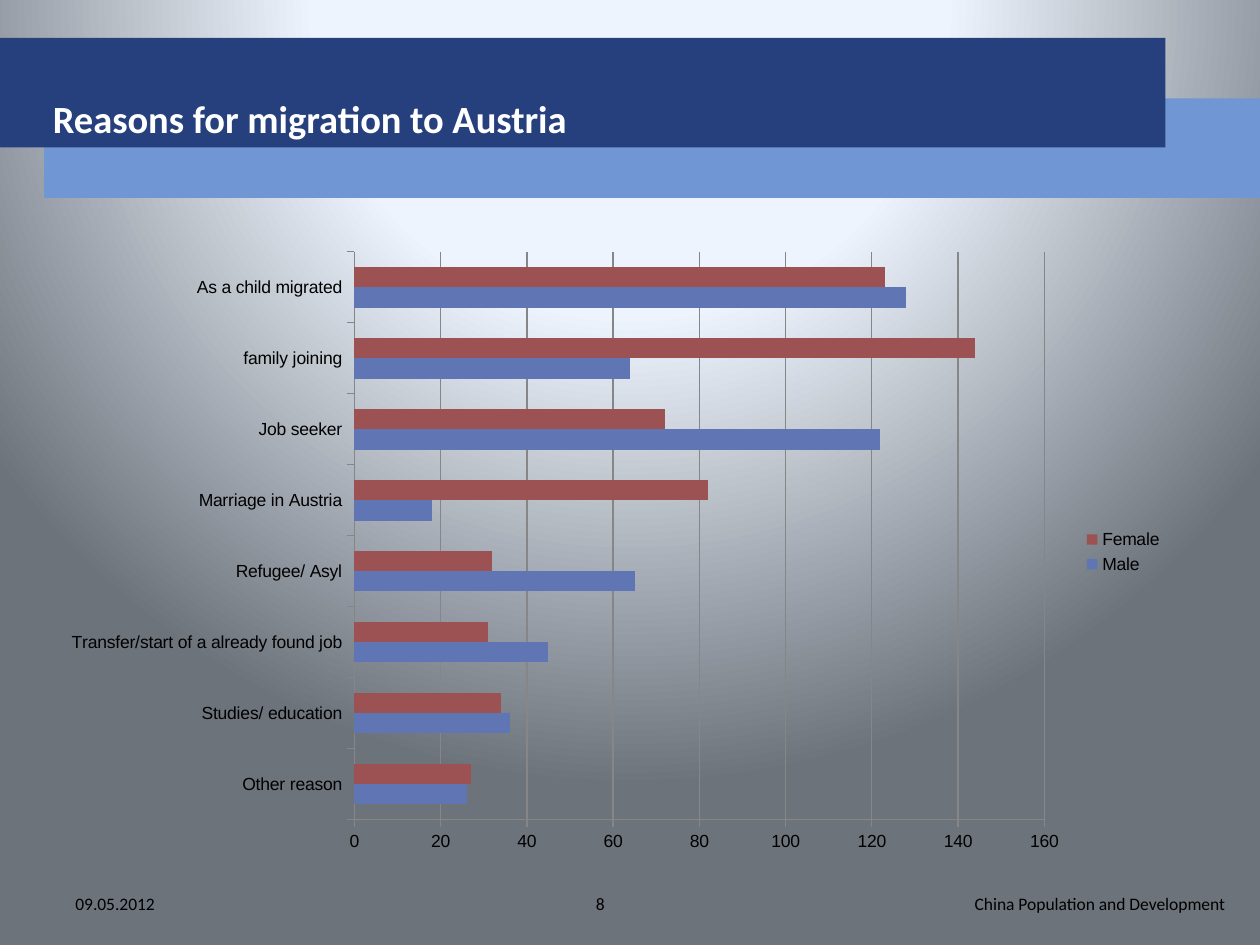
from typing import NamedTuple

from lxml import etree
from pptx import Presentation
from pptx.chart.data import CategoryChartData
from pptx.dml.color import RGBColor
from pptx.enum.chart import XL_CHART_TYPE, XL_LEGEND_POSITION, XL_TICK_MARK
from pptx.enum.shapes import MSO_SHAPE
from pptx.enum.text import MSO_ANCHOR, MSO_AUTO_SIZE, PP_ALIGN
from pptx.oxml.ns import qn
from pptx.util import Inches, Pt

RECT = MSO_SHAPE.RECTANGLE
BAR = XL_CHART_TYPE.BAR_CLUSTERED
LEGEND_RIGHT = XL_LEGEND_POSITION.RIGHT
TICK_OUT, TICK_NONE = XL_TICK_MARK.OUTSIDE, XL_TICK_MARK.NONE
LEFT, CENTER, RIGHT = PP_ALIGN.LEFT, PP_ALIGN.CENTER, PP_ALIGN.RIGHT

WHITE = RGBColor(0xFF, 0xFF, 0xFF)
BLACK = RGBColor(0x00, 0x00, 0x00)
NAVY = RGBColor(0x26, 0x40, 0x7E)
LIGHT_BLUE = RGBColor(0x70, 0x97, 0xD3)
MALE_BLUE = RGBColor(0x60, 0x76, 0xB4)
FEMALE_RED = RGBColor(0x9C, 0x52, 0x52)
AXIS_GREY = RGBColor(0x86, 0x86, 0x86)
BG_STOPS = ((0, "F0F6FE"), (40, "EDF4FD"), (100, "6D737B"))
BG_FOCUS = {"l": 50, "t": -80, "r": 50, "b": 180}


class Band(NamedTuple):
    left: float
    top: float
    width: float
    height: float
    color: RGBColor


class FooterItem(NamedTuple):
    left: float
    text: str
    align: PP_ALIGN


class Series(NamedTuple):
    name: str
    values: tuple
    color: RGBColor


BANDS = (
    Band(0.35, 0.78, 9.65, 0.79, LIGHT_BLUE),
    Band(0, 0.3, 9.25, 0.87, NAVY),
)
FOOTER = (
    FooterItem(7.49, "China Population and Development", RIGHT),
    FooterItem(3.6, "8", CENTER),
    FooterItem(0.5, "09.05.2012", LEFT),
)
REASONS = (
    "Other reason", "Studies/ education",
    "Transfer/start of a already found job", "Refugee/ Asyl",
    "Marriage in Austria", "Job seeker", "family joining",
    "As a child migrated",
)
SERIES = (
    Series("Male", (26, 36, 45, 65, 18, 122, 64, 128), MALE_BLUE),
    Series("Female", (27, 34, 31, 32, 82, 72, 144, 123), FEMALE_RED),
)


def set_font(font, color: RGBColor, **values) -> None:
    for name, value in values.items():
        setattr(font, name, value)
    font.color.rgb = color


def set_background(s) -> None:
    """Circular gradient centred above the slide."""
    fill = s.background.fill
    fill.gradient()
    grad = s.background._cSld.find(".//" + qn("a:gradFill"))
    for child in list(grad):
        grad.remove(child)
    stops = etree.SubElement(grad, qn("a:gsLst"))
    for percent, color in BG_STOPS:
        stop = etree.SubElement(stops, qn("a:gs"), pos=str(percent * 1000))
        etree.SubElement(stop, qn("a:srgbClr"), val=color)
    circle = etree.SubElement(grad, qn("a:path"))
    circle.set("path", "circle")
    focus = {side: str(value * 1000) for side, value in BG_FOCUS.items()}
    etree.SubElement(circle, qn("a:fillToRect"), **focus)


def add_band(s, band: Band) -> None:
    sp = s.shapes.add_shape(RECT, *(Inches(v) for v in band[:4]))
    sp.shadow.inherit = False
    sp.fill.solid()
    sp.fill.fore_color.rgb = band.color
    sp.line.fill.background()


def add_footer_item(s, item: FooterItem) -> None:
    sp = s.shapes.add_textbox(Inches(item.left), Inches(6.97), Inches(2.33), Inches(0.4))
    tf = sp.text_frame
    tf.word_wrap = True
    tf.vertical_anchor = MSO_ANCHOR.MIDDLE
    p = tf.paragraphs[0]
    p.alignment = item.align
    r = p.add_run()
    r.text = item.text
    set_font(r.font, BLACK, name="Calibri", size=Pt(10))


def format_title(s, text: str) -> None:
    sp = s.shapes.title
    place = {"left": 0.13, "top": 0.3, "width": 8.81, "height": 0.87}
    for name, value in place.items():
        setattr(sp, name, Inches(value))
    s.shapes._spTree.append(sp._element)  # in front of the bands
    tf = sp.text_frame
    tf.auto_size = MSO_AUTO_SIZE.NONE
    tf.vertical_anchor = MSO_ANCHOR.BOTTOM
    p = tf.paragraphs[0]
    p.alignment = LEFT
    p._p.get_or_add_pPr().set("marL", str(Inches(0.19)))
    r = p.add_run()
    r.text = text
    set_font(r.font, WHITE, name="Calibri", size=Pt(22), bold=True)


def add_reasons_chart(s) -> None:
    data = CategoryChartData(number_format="0")
    data.categories = REASONS
    for series in SERIES:
        data.add_series(series.name, series.values)
    chart = s.shapes.add_chart(
        BAR, Inches(0.39), Inches(1.9), Inches(8.94), Inches(4.96), data
    ).chart
    set_font(chart.font, BLACK, name="Arial", size=Pt(10))
    chart.has_title = False
    chart.has_legend = True
    chart.legend.position = LEGEND_RIGHT
    chart.legend.include_in_layout = False

    plot = chart.plots[0]
    plot.gap_width = 150
    plot.vary_by_categories = False
    for drawn, series in zip(plot.series, SERIES):
        drawn.format.fill.solid()
        drawn.format.fill.fore_color.rgb = series.color

    value_axis = chart.value_axis
    scale = {"minimum_scale": 0, "maximum_scale": 160, "major_unit": 20,
             "has_major_gridlines": True}
    for name, value in scale.items():
        setattr(value_axis, name, value)
    for axis in (chart.category_axis, value_axis):
        axis.major_tick_mark = TICK_OUT
        axis.minor_tick_mark = TICK_NONE
    for part in (chart.category_axis, value_axis, value_axis.major_gridlines):
        part.format.line.color.rgb = AXIS_GREY
        part.format.line.width = Pt(0.75)


def main() -> None:
    prs = Presentation()
    prs.slide_width, prs.slide_height = Inches(10), Inches(7.5)
    s = prs.slides.add_slide(prs.slide_layouts[5])  # title only
    set_background(s)
    for band in BANDS:
        add_band(s, band)
    for item in FOOTER:
        add_footer_item(s, item)
    format_title(s, "Reasons for migration to Austria")
    add_reasons_chart(s)
    prs.save("out.pptx")


if __name__ == "__main__":
    main()
